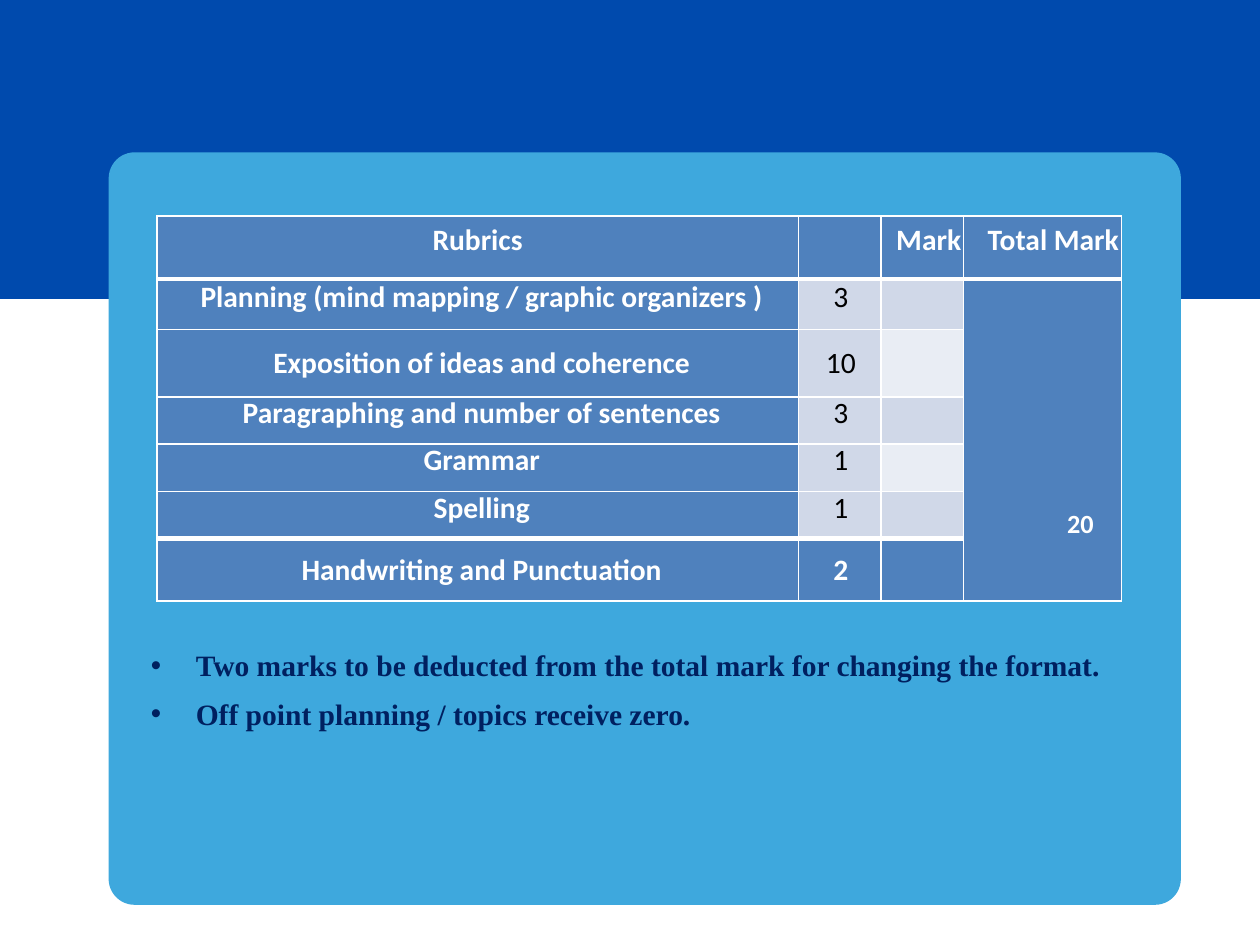
import pptx
import pptx.util
import pptx.dml.color
import pptx.enum.shapes
import pptx.enum.text
import pptx.oxml
import pptx.oxml.ns

Inches = pptx.util.Inches
Pt = pptx.util.Pt
SHAPE = pptx.enum.shapes.MSO_SHAPE
ANCHOR = pptx.enum.text.MSO_ANCHOR
ALIGN = pptx.enum.text.PP_ALIGN


def color(code):
    return pptx.dml.color.RGBColor.from_string(code)


class Board:
    deep, sky, navy = "004AAD", "3EA8DD", "002060"
    blue, white, black = "4F81BD", "FFFFFF", "000000"
    tint, pale = "D0D8E8", "E9EDF4"
    body, serif = "Calibri", "Times New Roman"

    def __init__(self, slide):
        self.slide = slide

    def block(self, kind, box, fill, round=None):
        shape = self.slide.shapes.add_shape(kind, *map(Inches, box))
        shape.shadow.inherit = False
        shape.fill.solid()
        shape.fill.fore_color.rgb = color(fill)
        shape.line.fill.background()
        if round is not None:
            shape.adjustments[0] = round

    def run(self, para, text, font, size, tone, bold=True):
        run = para.add_run()
        run.text = text
        run.font.name = font
        run.font.size = Pt(size)
        run.font.bold = bold
        run.font.color.rgb = color(tone)

    def notes(self, box, lines):
        shape = self.slide.shapes.add_textbox(*map(Inches, box))
        frame = shape.text_frame
        frame.word_wrap = True
        for i, text in enumerate(lines):
            para = frame.add_paragraph() if i else frame.paragraphs[0]
            para.space_before = Pt(8 if i else 0)
            props = para._p.get_or_add_pPr()
            props.set("marL", str(Inches(0.38)))
            props.set("indent", str(-Inches(0.38)))
            for tag, key, value in (("buFont", "typeface", "Arial"),
                                    ("buChar", "char", "•")):
                mark = pptx.oxml.parse_xml(
                    f'<a:{tag} {pptx.oxml.ns.nsdecls("a")}/>')
                mark.set(key, value)
                props.append(mark)
            self.run(para, text, self.serif, 18, self.navy)

    def grid(self, spot, cols, rows):
        frame = self.slide.shapes.add_table(
            len(rows), len(cols), *map(Inches, (*spot, sum(cols), sum(rows))))
        table = frame.table
        for col, width in zip(table.columns, cols):
            col.width = Inches(width)
        for row, height in zip(table.rows, rows):
            row.height = Inches(height)
        return table

    def cell(self, cell, fill, top=1, base=1):
        cell.margin_left = cell.margin_right = 0
        cell.margin_top = cell.margin_bottom = 0
        cell.vertical_anchor = ANCHOR.MIDDLE
        cell.fill.solid()
        cell.fill.fore_color.rgb = color(fill)
        # Borders go ahead of the fill
        props = cell._tc.get_or_add_tcPr()
        for i, (side, width) in enumerate(zip("LRTB", (1, 1, top, base))):
            props.insert(i, pptx.oxml.parse_xml(
                f'<a:ln{side} {pptx.oxml.ns.nsdecls("a")} w="{Pt(width)}">'
                f'<a:solidFill><a:srgbClr val="{self.white}"/></a:solidFill>'
                f'</a:ln{side}>'))

    def label(self, cell, text, left=0, size=18, tone=white, bold=True,
              lead=None, gap=0):
        para = cell.text_frame.paragraphs[0]
        para.alignment = ALIGN.CENTER
        para.space_before = Pt(gap)
        if lead:
            para.line_spacing = Pt(lead)
        para._p.get_or_add_pPr().set("marL", str(Inches(left)))
        self.run(para, text, self.body, size, tone, bold)


def main():
    deck = pptx.Presentation()
    deck.slide_width, deck.slide_height = Inches(10.67), Inches(8)
    board = Board(deck.slides.add_slide(deck.slide_layouts[6]))

    # Backdrop band and card
    board.block(SHAPE.RECTANGLE, (0, 0, 10.67, 2.53), board.deep)
    board.block(SHAPE.ROUNDED_RECTANGLE, (0.92, 1.29, 9.08, 6.37),
                board.sky, 0.22 / 6.37)

    # Notes under the table
    board.notes((1.18, 5.43, 8.58, 0.82), (
        "Two marks to be deducted from the total mark for changing the format.",
        "Off point planning / topics receive zero."))

    # Rubric table: label, points, line pitch, space before
    heads = (("Rubrics", 0), ("", 0), ("Mark", 0.11), ("Total Mark", 0.18))
    items = (
        ("Planning (mind mapping / graphic organizers )", "3", 13.8, 1.4),
        ("Exposition of ideas and coherence", "10", None, 3.8),
        ("Paragraphing and number of sentences", "3", 13.6, 0.5),
        ("Grammar", "1", 13.4, 0.7),
        ("Spelling", "1", 13.6, 0.7),
        ("Handwriting and Punctuation", "2", None, 2.8))
    table = board.grid((1.33, 1.83), (5.43, 0.7, 0.7, 1.34),
                       (0.53, 0.43, 0.57, 0.4, 0.4, 0.4, 0.53))
    last = len(items)

    # Header row
    for c, (text, left) in enumerate(heads):
        cell = table.cell(0, c)
        board.cell(cell, board.blue, base=3)
        if text:
            board.label(cell, text, left, lead=13.8)

    # Item rows
    for r, (text, points, lead, gap) in enumerate(items, 1):
        final = r == last
        band = board.tint if r % 2 else board.pale
        fills = [board.blue, board.tint, band, board.blue]
        if final:
            fills = [board.blue] * 4
        for c, fill in enumerate(fills):
            top = 3 if r == 1 or (final and c < 3) else 1
            base = 3 if r == last - 1 and c < 3 else 1
            board.cell(table.cell(r, c), fill, top, base)
        board.label(table.cell(r, 0), text, 0.07, lead=lead, gap=gap)
        board.label(table.cell(r, 1), points, 0.02, lead=lead, gap=gap,
                    tone=board.white if final else board.black, bold=final)

    # Total, over all item rows
    total = table.cell(1, 3)
    total.merge(table.cell(last, 3))
    total.vertical_anchor = ANCHOR.BOTTOM
    total.margin_bottom = Inches(0.51)
    board.label(total, "20", 0.64, size=16)

    deck.save("out.pptx")


if __name__ == "__main__":
    main()
